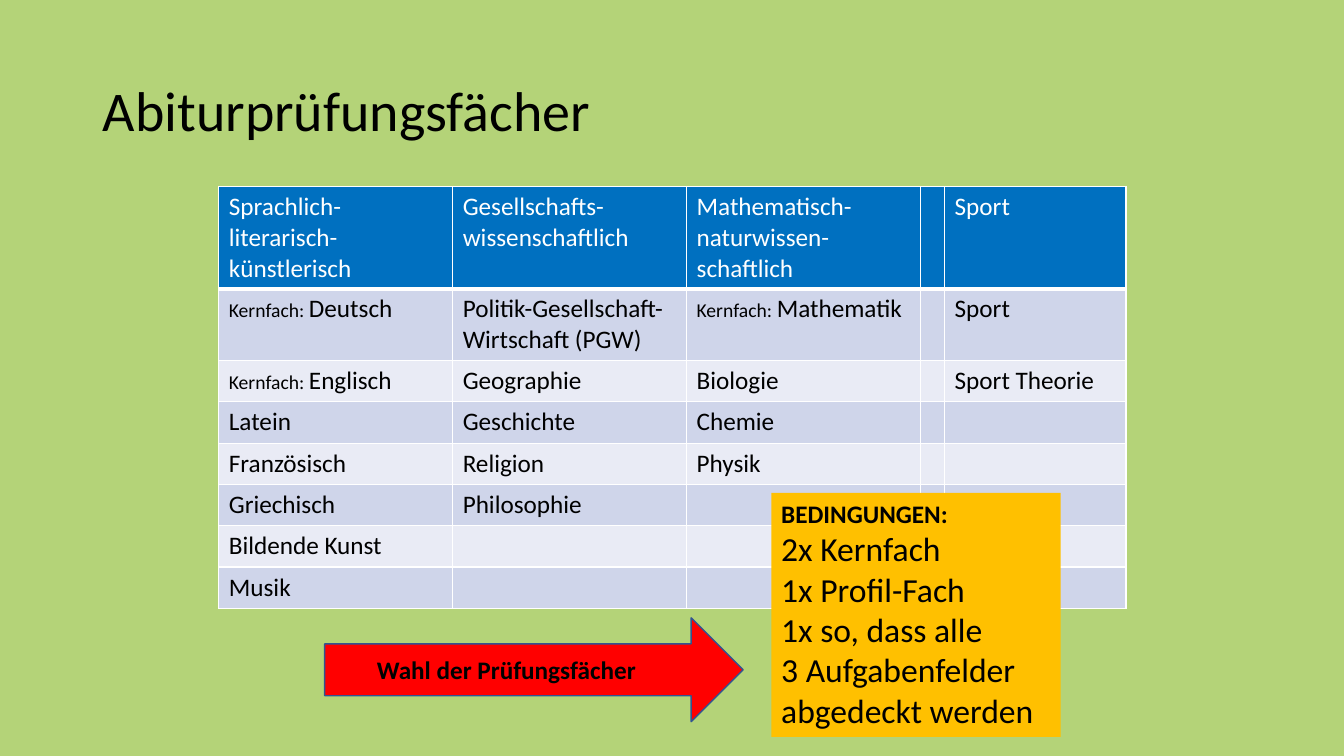
"""Slide with the exam subjects by field and the rules for choosing them."""
from dataclasses import dataclass

from lxml import etree
from pptx import Presentation
from pptx.dml.color import RGBColor
from pptx.enum.shapes import MSO_SHAPE as SHAPE
from pptx.enum.text import MSO_ANCHOR as ANCHOR, MSO_AUTO_SIZE as AUTO, PP_ALIGN as ALIGN
from pptx.oxml.ns import qn
from pptx.util import Inches, Pt


@dataclass(frozen=True)
class Theme:
    """Colours, font and type sizes of the slide."""
    font: str = "Calibri"
    background: str = "B4D378"
    ink: str = "000000"
    white: str = "FFFFFF"
    header: str = "0070C0"
    bands: tuple = ("E9EBF5", "CFD5EA")
    arrow: str = "FF0000"
    arrow_line: str = "325491"
    box: str = "FFC000"
    title: int = 40
    rule: int = 24
    text: int = 18
    small: int = 14


THEME = Theme()
CORE = "Kernfach: "
COLUMN_WIDTHS = (2.32, 2.32, 2.32, 0.23, 1.8)
ROW_HEIGHT = 0.41
SUBJECTS = (
    ("Sprachlich-literarisch-künstlerisch", "Gesellschafts-wissenschaftlich",
     "Mathematisch-naturwissen-schaftlich", "", "Sport"),
    (CORE + "Deutsch", "Politik-Gesellschaft-Wirtschaft (PGW)", CORE + "Mathematik", "", "Sport"),
    (CORE + "Englisch", "Geographie", "Biologie", "", "Sport Theorie"),
    ("Latein", "Geschichte", "Chemie", "", ""),
    ("Französisch", "Religion", "Physik", "", ""),
    ("Griechisch", "Philosophie", "", "", ""),
    ("Bildende Kunst", "", "", "", ""),
    ("Musik", "", "", "", ""),
)
RULES = ("2x Kernfach", "1x Profil-Fach", "1x so, dass alle", "3 Aufgabenfelder", "abgedeckt werden")


def rgb(color):
    """Turn a hex string into a colour."""
    return RGBColor.from_string(color)


def add_run(p, text, size, color=THEME.ink, bold=False):
    """Add one formatted run to a paragraph."""
    r = p.add_run()
    r.text = text
    r.font.name, r.font.size, r.font.bold = THEME.font, Pt(size), bold
    r.font.color.rgb = rgb(color)


def add_box(s, kind, box, fill, line=None):
    """Add a filled preset shape with an optional outline."""
    sp = s.shapes.add_shape(kind, *map(Inches, box))
    sp.shadow.inherit = False
    sp.fill.solid()
    sp.fill.fore_color.rgb = rgb(fill)
    if line:
        sp.line.color.rgb = rgb(line)
        sp.line.width = Pt(1)
    else:
        sp.line.fill.background()
    return sp


def add_title(s, text):
    """Place and fill the title placeholder."""
    sp = s.shapes.title
    sp.left, sp.top, sp.width, sp.height = map(Inches, (0.92, 0.4, 11.5, 1.45))
    tf = sp.text_frame
    tf.vertical_anchor, tf.auto_size = ANCHOR.MIDDLE, AUTO.NONE
    p = tf.paragraphs[0]
    p.alignment, p.line_spacing = ALIGN.LEFT, 0.9
    add_run(p, text, THEME.title)


def set_borders(cell, bottom):
    """Draw white borders of one point, with the given bottom width."""
    tc_pr = cell._tc.get_or_add_tcPr()
    for side, width in (("L", 1), ("R", 1), ("T", 1), ("B", bottom)):
        ln = etree.SubElement(tc_pr, qn(f"a:ln{side}"), w=str(Pt(width)))
        fill = etree.SubElement(ln, qn("a:solidFill"))
        etree.SubElement(fill, qn("a:srgbClr"), val=THEME.white)


def fill_cell(cell, text, row):
    """Format one table cell and write its text."""
    header = row == 0
    set_borders(cell, 3 if header else 1)
    cell.fill.solid()
    cell.fill.fore_color.rgb = rgb(THEME.header if header else THEME.bands[row % 2])
    p = cell.text_frame.paragraphs[0]
    if text.startswith(CORE):
        add_run(p, CORE, THEME.small)
        text = text.removeprefix(CORE)
    if text:
        add_run(p, text, THEME.text, THEME.white if header else THEME.ink)


def add_subject_table(s):
    """Add the table of subjects by field."""
    size = (sum(COLUMN_WIDTHS), ROW_HEIGHT * len(SUBJECTS))
    frame = s.shapes.add_table(len(SUBJECTS), len(COLUMN_WIDTHS), *map(Inches, (2.17, 1.85, *size)))
    table = frame.table
    for column, width in zip(table.columns, COLUMN_WIDTHS):
        column.width = Inches(width)
    for i, subjects in enumerate(SUBJECTS):
        table.rows[i].height = Inches(ROW_HEIGHT)
        for j, subject in enumerate(subjects):
            fill_cell(table.cell(i, j), subject, i)


def add_rules(s):
    """Add the box with the conditions."""
    tf = add_box(s, SHAPE.RECTANGLE, (7.65, 4.89, 2.87, 2.42), THEME.box).text_frame
    tf.word_wrap, tf.vertical_anchor = True, ANCHOR.TOP
    p = tf.paragraphs[0]
    p.alignment = ALIGN.LEFT
    add_run(p, "BEDINGUNGEN:", THEME.text, bold=True)
    for rule in RULES:
        p = tf.add_paragraph()
        p.alignment = ALIGN.LEFT
        add_run(p, rule, THEME.rule)


def add_label(s, box, text):
    """Add a bold text label."""
    tf = s.shapes.add_textbox(*map(Inches, box)).text_frame
    tf.word_wrap = True
    add_run(tf.paragraphs[0], text, THEME.text, bold=True)


def main():
    """Build and save the slide."""
    prs = Presentation()
    prs.slide_width, prs.slide_height = Inches(13.33), Inches(7.5)
    s = prs.slides.add_slide(prs.slide_layouts[5])
    s.background.fill.solid()
    s.background.fill.fore_color.rgb = rgb(THEME.background)
    add_box(s, SHAPE.RIGHT_ARROW, (3.22, 6.13, 4.15, 1.03), THEME.arrow, THEME.arrow_line)
    add_title(s, "Abiturprüfungsfächer")
    add_subject_table(s)
    add_rules(s)
    add_label(s, (3.64, 6.44, 5.17, 0.4), "Wahl der Prüfungsfächer")
    prs.save("out.pptx")


if __name__ == "__main__":
    main()
